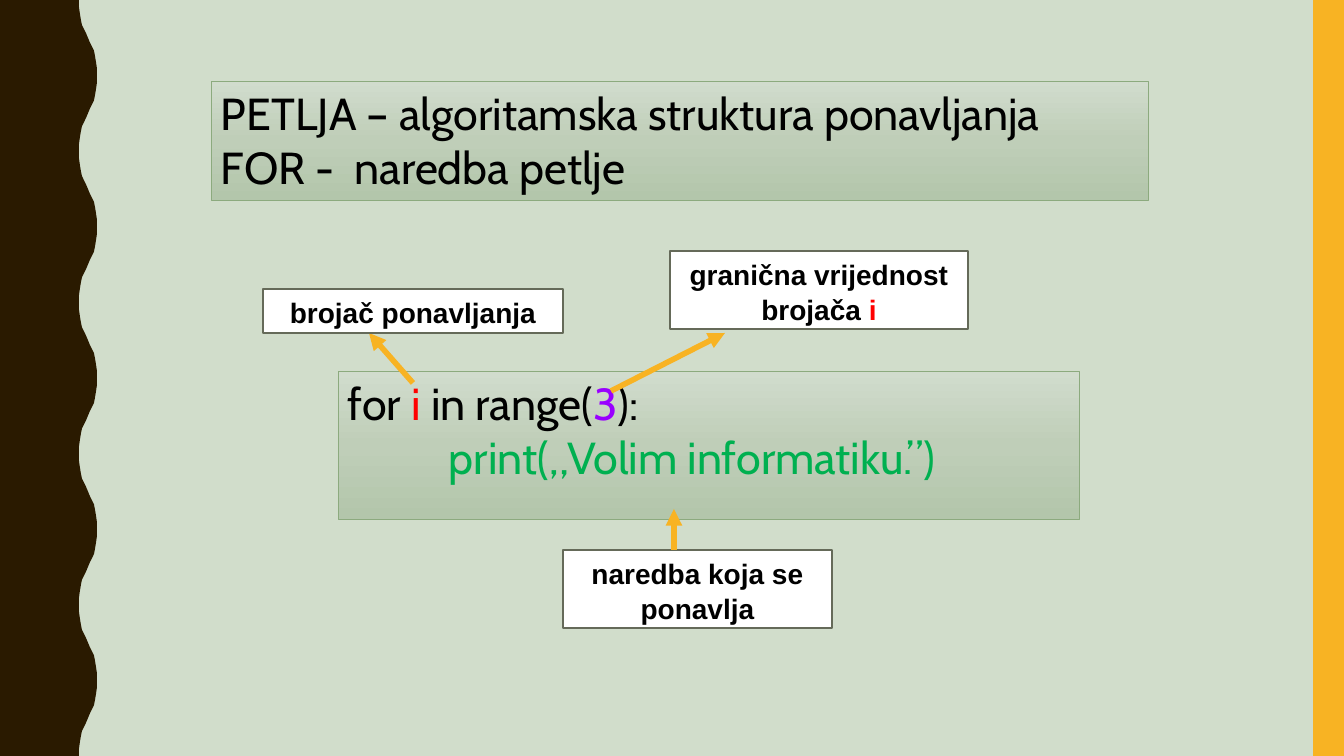
from copy import deepcopy

from lxml.etree import SubElement
from pptx import Presentation
from pptx.dml.color import RGBColor
from pptx.enum.shapes import MSO_CONNECTOR as Connector, MSO_SHAPE as Shape
from pptx.enum.text import MSO_ANCHOR as Anchor, PP_ALIGN as Align
from pptx.oxml.ns import qn
from pptx.util import Pt

WIDTH, HEIGHT = 1344, 756
EMU_PER_PX = 914400 / 100.8
WAVES = 5
# First quarter of one wave, from its trough
WAVE_QUARTER = [(79, 0), (79, 7), (80, 14), (81, 20), (82, 25), (84, 29), (86, 33)]
WAVE_MIDDLE = 88

BLACK, RED, PURPLE, GREEN = "000000", "FF0000", "9900FF", "00B050"
BACKGROUND, BROWN, AMBER, WHITE = "D1DDCB", "2A1A00", "F8B323", "FFFFFF"
PANEL_STOPS = [(0, "D1DCCD"), (0.5, "BFCEB8"), (1, "B3C6AB")]
PANEL_LINE, LABEL_LINE = "8CAA7E", "656A59"


def px(length):
    return round(length * EMU_PER_PX)


def color(value):
    return RGBColor.from_string(value)


def wave_edge():
    """Points of the wavy edge from the top of the slide to the bottom."""
    period = HEIGHT / WAVES
    half = period / 2
    rising = WAVE_QUARTER + [(WAVE_MIDDLE, half / 2)]
    rising += [(2 * WAVE_MIDDLE - x, half - y) for x, y in reversed(WAVE_QUARTER)]
    wave = rising + [(x, period - y) for x, y in reversed(rising[1:-1])]
    points = [(x, y + number * period) for number in range(WAVES) for x, y in wave]
    return points + [(WAVE_QUARTER[0][0], HEIGHT)]


class SlideBuilder:
    def __init__(self, page):
        self.page = page
        fill = page.background.fill
        fill.solid()
        fill.fore_color.rgb = color(BACKGROUND)

    def paint(self, shape, fill):
        shape.shadow.inherit = False
        shape.fill.solid()
        shape.fill.fore_color.rgb = color(fill)
        shape.line.fill.background()

    def outline(self, shape, line, width):
        shape.line.color.rgb = color(line)
        shape.line.width = Pt(width)

    def rectangle(self, left, top, width, height, fill):
        box = self.page.shapes.add_shape(
            Shape.RECTANGLE, px(left), px(top), px(width), px(height))
        self.paint(box, fill)
        return box

    def wavy_band(self, fill):
        builder = self.page.shapes.build_freeform(0, 0)
        points = wave_edge() + [(0, HEIGHT)]
        builder.add_line_segments([(px(x), px(y)) for x, y in points], close=True)
        self.paint(builder.convert_to_shape(), fill)

    def add_text(self, box, paragraphs, font, size, bold=False, align=Align.LEFT, spacing=1.0):
        """Each paragraph is an indent in px and a list of (text, colour) runs."""
        frame = box.text_frame
        frame.word_wrap = True
        frame.vertical_anchor = Anchor.TOP
        for number, (indent, runs) in enumerate(paragraphs):
            para = frame.add_paragraph() if number else frame.paragraphs[0]
            para.alignment = align
            para.line_spacing = spacing
            if indent:
                para._p.get_or_add_pPr().set("marL", str(px(indent)))
            for text, tint in runs:
                span = para.add_run()
                span.text = text
                span.font.name = font
                span.font.size = Pt(size)
                span.font.bold = bold
                span.font.color.rgb = color(tint)

    def panel(self, left, top, width, height, paragraphs):
        box = self.rectangle(left, top, width, height, WHITE)
        box.fill.gradient()
        box.fill.gradient_angle = 270
        stop_list = box._element.spPr.find(qn("a:gradFill")).find(qn("a:gsLst"))
        stop_list.insert(1, deepcopy(stop_list[0]))
        for stop, (position, tint) in zip(box.fill.gradient_stops, PANEL_STOPS):
            stop.position = position
            stop.color.rgb = color(tint)
        self.outline(box, PANEL_LINE, 0.5)
        self.add_text(box, paragraphs, "Cabin", 32)

    def label(self, left, top, width, height, runs):
        box = self.rectangle(left, top, width, height, WHITE)
        self.outline(box, LABEL_LINE, 1)
        self.add_text(box, [(0, runs)], "Arial", 20, True, Align.CENTER, 1.05)

    def arrow(self, start, end):
        link = self.page.shapes.add_connector(
            Connector.STRAIGHT, *(px(value) for value in start + end))
        self.outline(link, AMBER, 4)
        line = link._element.spPr.find(qn("a:ln"))
        SubElement(line, qn("a:tailEnd"), type="triangle")
        SubElement(link._element.spPr, qn("a:effectLst"))


def main():
    deck = Presentation()
    deck.slide_width, deck.slide_height = px(WIDTH), px(HEIGHT)
    slide = SlideBuilder(deck.slides.add_slide(deck.slide_layouts[6]))

    slide.wavy_band(BROWN)
    slide.rectangle(1313, 0, 31, HEIGHT, AMBER)

    slide.panel(211, 81, 937, 119, [
        (0, [("PETLJA – algoritamska struktura ponavljanja", BLACK)]),
        (0, [("FOR -  naredba petlje", BLACK)]),
    ])
    slide.panel(338, 371, 741, 148, [
        (0, [("for ", BLACK), ("i ", RED), ("in range(", BLACK),
             ("3", PURPLE), ("):", BLACK)]),
        (101, [("print(„Volim informatiku.”)", GREEN)]),
    ])

    slide.arrow((413, 383), (369, 333))
    slide.label(263, 289, 300, 44, [("brojač ponavljanja", BLACK)])
    slide.arrow((611, 391), (725, 333))
    slide.label(670, 251, 298, 78, [("granična vrijednost brojača", BLACK), (" i", RED)])
    slide.label(563, 550, 269, 78, [("naredba koja se ponavlja", BLACK)])
    slide.arrow((674, 550), (674, 509))

    deck.save("out.pptx")


if __name__ == "__main__":
    main()
